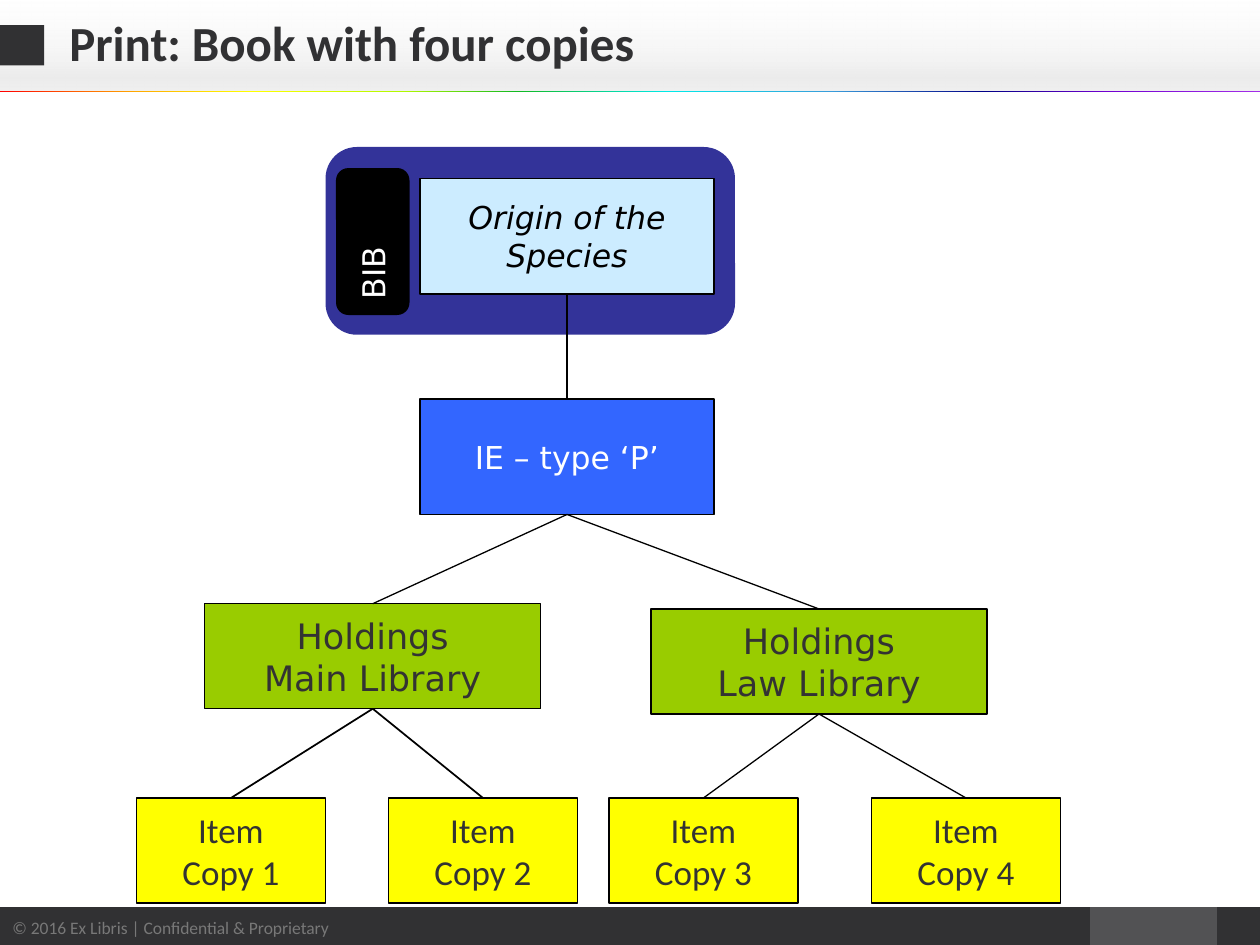
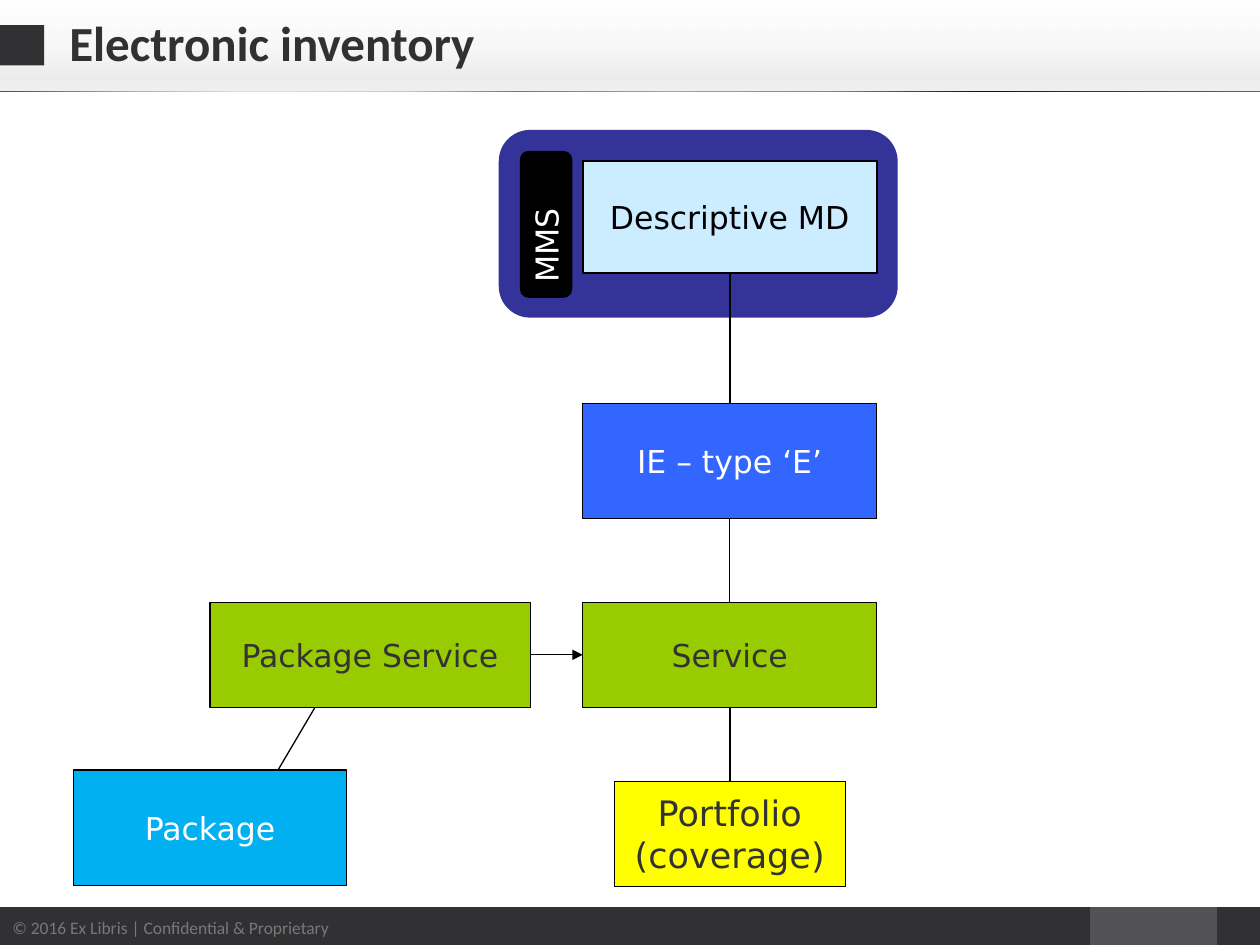
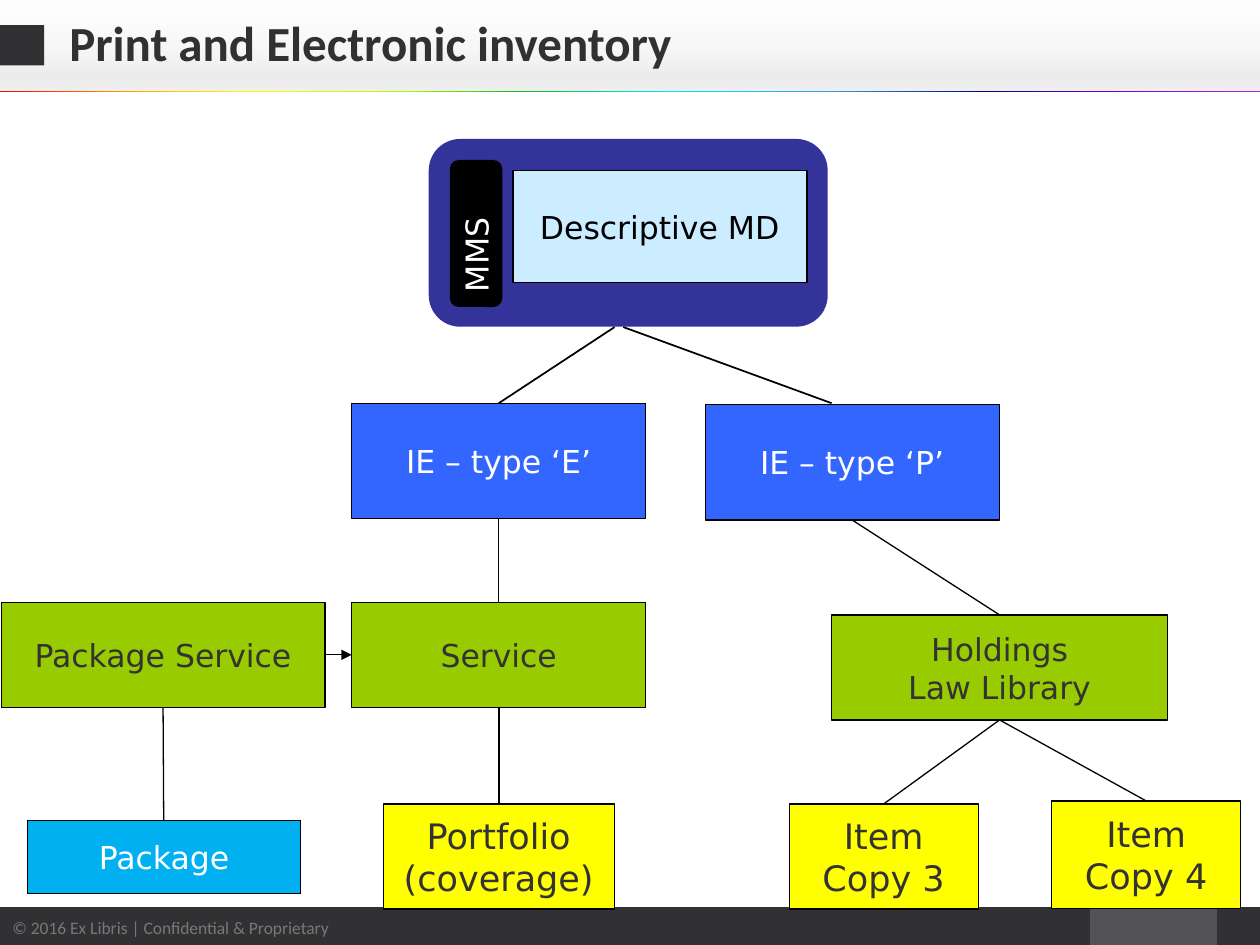
from dataclasses import dataclass, replace
from typing import Any, NamedTuple, Optional, Union

from pptx import Presentation
from pptx.dml.color import RGBColor
from pptx.enum.shapes import MSO_CONNECTOR, MSO_SHAPE
from pptx.enum.text import MSO_ANCHOR, MSO_AUTO_SIZE, PP_ALIGN
from pptx.oxml import parse_xml
from pptx.oxml.ns import nsdecls, qn
from pptx.util import Pt


@dataclass(frozen=True)
class Theme:
    heading_font: str = "Calibri"
    diagram_font: str = "DejaVu Sans"
    title_size: int = 28
    large_size: int = 20
    label_size: int = 18
    footer_size: int = 10
    charcoal: str = "313133"
    slate: str = "525254"
    footer_ink: str = "787878"
    ink: str = "333333"
    black: str = "000000"
    white: str = "FFFFFF"
    navy: str = "333399"
    ice: str = "CCECFF"
    blue: str = "3366FF"
    green: str = "99CC00"
    yellow: str = "FFFF00"
    cyan: str = "00B0F0"
    thin: float = 0.75
    thick: float = 1


class Stop(NamedTuple):
    position: int
    color: str
    opacity: int = 100


class Gradient(NamedTuple):
    angle: int
    stops: tuple[Stop, ...]


THEME = Theme()
HEADER_SHADE = Gradient(90, (
    Stop(0, "FAFAFA", 12), Stop(66, "D7D7D7", 30),
    Stop(83, "D7D7D7", 47), Stop(100, "E4E4E4", 54),
))
RAINBOW = Gradient(180, (
    Stop(0, "A22DE8"), Stop(12, "7200D1"), Stop(22, "000086"), Stop(34, "399CDB"),
    Stop(47, "00E9E8"), Stop(59, "11B920"), Stop(68, "B1F900"), Stop(80, "FFFF00"),
    Stop(89, "FFAB00"), Stop(100, "FF0000"),
))


@dataclass(frozen=True)
class Style:
    fill: Union[str, Gradient]
    ink: str = THEME.ink
    size: int = THEME.label_size
    font: str = THEME.diagram_font
    outline: Optional[float] = THEME.thin
    italic: bool = False
    wrap: bool = False
    align: PP_ALIGN = PP_ALIGN.CENTER
    preset: MSO_SHAPE = MSO_SHAPE.FLOWCHART_PROCESS
    upward: bool = False


RECORD = Style(THEME.navy, outline=None, preset=MSO_SHAPE.ROUNDED_RECTANGLE)
TAG = replace(RECORD, fill=THEME.black, ink=THEME.white, wrap=True, upward=True)
DESCRIPTION = Style(THEME.ice, THEME.black, outline=THEME.thick, wrap=True)
WORK_TITLE = replace(DESCRIPTION, italic=True)
ENTITY = Style(THEME.blue, THEME.white, wrap=True)
SERVICE = Style(THEME.green)
HOLDINGS = replace(SERVICE, size=THEME.large_size)
ITEM = Style(THEME.yellow, size=THEME.large_size)
PRINT_ITEM = replace(ITEM, font=THEME.heading_font)
PACKAGE = replace(ENTITY, fill=THEME.cyan)
BAND = Style(THEME.charcoal, THEME.footer_ink, THEME.footer_size, THEME.heading_font,
             outline=None, wrap=True, align=PP_ALIGN.LEFT, preset=MSO_SHAPE.RECTANGLE)


class Box(NamedTuple):
    key: str
    style: Style
    left: float
    top: float
    width: float
    height: float
    text: str = ""


class Side(NamedTuple):
    key: str
    site: int


class Spot(NamedTuple):
    left: float
    top: float


class Link(NamedTuple):
    start: Union[Side, Spot]
    finish: Union[Side, Spot]
    width: float = THEME.thin
    arrow: bool = False
    behind: str = ""


class Diagram(NamedTuple):
    title: str
    boxes: list[Box]
    links: list[Link]


TOP, LEFT, BOTTOM, RIGHT = range(4)

FRAME = [
    Box("page number", replace(BAND, fill=THEME.slate), 622.8, 518.4, 72.7, 23),
    Box("footer end", BAND, 695.5, 518.4, 25.2, 23),
    Box("header", replace(BAND, fill=HEADER_SHADE), -0.7, 0.7, 720.7, 51.8),
    Box("footer", BAND, 0, 518.4, 622.8, 23,
        "© 2016 Ex Libris | Confidential & Proprietary"),
    Box("title marker", BAND, 0, 14.4, 25.2, 23),
    Box("rainbow", replace(BAND, fill=RAINBOW), 0, 51.8, 720, 1),
]


def apply(target: Any, values: dict[str, Any]) -> None:
    for attribute, value in values.items():
        setattr(target, attribute, value)


def color(value: str) -> RGBColor:
    return RGBColor.from_string(value)


def paint_gradient(shape: Any, gradient: Gradient) -> None:
    stops = "".join(
        f'<a:gs pos="{stop.position * 1000}"><a:srgbClr val="{stop.color}">'
        f'<a:alpha val="{stop.opacity * 1000}"/></a:srgbClr></a:gs>'
        for stop in gradient.stops
    )
    shape.fill.background()
    properties = shape.element.spPr
    properties.replace(properties.find(qn("a:noFill")), parse_xml(
        f'<a:gradFill {nsdecls("a")} rotWithShape="1"><a:gsLst>{stops}</a:gsLst>'
        f'<a:lin ang="{gradient.angle * 60000}" scaled="0"/></a:gradFill>'))


def write(shape: Any, text: str, style: Style) -> None:
    frame = shape.text_frame
    frame.text = text
    apply(frame, {"word_wrap": style.wrap, "vertical_anchor": MSO_ANCHOR.MIDDLE})
    for paragraph in frame.paragraphs:
        paragraph.alignment = style.align
        for run in paragraph.runs:
            apply(run.font, {"name": style.font, "size": Pt(style.size),
                             "italic": style.italic})
            run.font.color.rgb = color(style.ink)


def draw_box(slide: Any, box: Box) -> Any:
    style = box.style
    shape = slide.shapes.add_shape(style.preset, Pt(box.left), Pt(box.top),
                                   Pt(box.width), Pt(box.height))
    shape.shadow.inherit = False
    if isinstance(style.fill, Gradient):
        paint_gradient(shape, style.fill)
    else:
        shape.fill.solid()
        shape.fill.fore_color.rgb = color(style.fill)
    if style.outline is None:
        shape.line.fill.background()
    else:
        shape.line.color.rgb = color(THEME.black)
        shape.line.width = Pt(style.outline)
    if style.preset == MSO_SHAPE.ROUNDED_RECTANGLE:
        shape.adjustments[0] = 0.167
    if box.text:
        write(shape, box.text, style)
    if style.upward:
        shape.rotation = 180
        shape.element.find(".//" + qn("a:bodyPr")).set("vert", "eaVert")
    return shape


def draw_link(slide: Any, link: Link, drawn: dict[str, Any]) -> None:
    spots = [end if isinstance(end, Spot) else Spot(0, 0)
             for end in (link.start, link.finish)]
    connector = slide.shapes.add_connector(
        MSO_CONNECTOR.STRAIGHT, *(Pt(length) for spot in spots for length in spot))
    for end, join in ((link.start, connector.begin_connect),
                      (link.finish, connector.end_connect)):
        if isinstance(end, Side):
            join(drawn[end.key], end.site)
    connector.line.color.rgb = color(THEME.black)
    connector.line.width = Pt(link.width)
    properties = connector.element.spPr
    if link.arrow:
        properties.find(qn("a:ln")).append(
            parse_xml(f'<a:tailEnd {nsdecls("a")} type="triangle"/>'))
    properties.append(parse_xml(f'<a:effectLst {nsdecls("a")}/>'))
    if link.behind:
        drawn[link.behind].element.addprevious(connector.element)


def draw_title(slide: Any, text: str) -> None:
    title = slide.shapes.title
    apply(title, {"left": Pt(32.4), "top": Pt(1.4), "width": Pt(652.3), "height": Pt(49.7)})
    frame = title.text_frame
    frame.text = text
    apply(frame, {"word_wrap": True, "auto_size": MSO_AUTO_SIZE.NONE,
                  "vertical_anchor": MSO_ANCHOR.MIDDLE})
    heading = frame.paragraphs[0]
    apply(heading, {"alignment": PP_ALIGN.LEFT, "line_spacing": 0.9})
    font = heading.runs[0].font
    apply(font, {"name": THEME.heading_font, "size": Pt(THEME.title_size), "bold": True})
    font.color.rgb = color(THEME.charcoal)


def record(left: float, top: float, tag: str, inset: float, tag_width: float,
           text: str, style: Style, height: float) -> list[Box]:
    text_offset = inset + tag_width + 6
    return [
        Box("record", RECORD, left, top, text_offset + 180, 107.3),
        Box("tag", TAG, left + inset, top + 12, tag_width, 84, tag),
        Box("description", style, left + text_offset, top + 18, 168, height, text),
    ]


def mms_record(left: float, top: float) -> list[Box]:
    return record(left, top, "MMS", 12, 30, "Descriptive MD", DESCRIPTION, 64)


def entity(kind: str, left: float, top: float) -> Box:
    return Box(f"entity {kind}", ENTITY, left, top, 168, 66, f"IE – type ‘{kind}’")


def holdings(library: str, left: float, top: float, style: Style = HOLDINGS) -> Box:
    return Box(library, style, left, top, 192, 60, f"Holdings\n{library} Library")


def item(copy: int, left: float, top: float, style: Style = ITEM, height: float = 60) -> Box:
    return Box(f"copy {copy}", style, left, top, 108, height, f"Item\nCopy {copy}")


def service_chain(left: float, portfolio_top: float, supplier_left: float,
                  supplier_width: float) -> list[Box]:
    top = 344.2
    return [
        entity("E", left, 230.4),
        Box("service", SERVICE, left, top, 168, 60, "Service"),
        Box("portfolio", ITEM, left + 18, portfolio_top, 132, 60, "Portfolio\n(coverage)"),
        Box("package service", SERVICE, supplier_left, top, supplier_width, 60,
            "Package Service"),
    ]


def down(upper: str, lower: str, width: float = THEME.thin) -> Link:
    return Link(Side(upper, BOTTOM), Side(lower, TOP), width)


SERVICE_LINKS = [
    down("service", "portfolio", THEME.thick),
    down("entity E", "service"),
    Link(Side("package service", RIGHT), Side("service", LEFT), arrow=True),
]
LAW_LINKS = [down("Law", "copy 3"), down("Law", "copy 4")]

DIAGRAMS = [
    Diagram(
        "Print: Book with four copies",
        [
            *record(186, 84, "BIB", 6, 42, "Origin of the Species", WORK_TITLE, 66),
            entity("P", 240, 228),
            holdings("Main", 117, 345),
            holdings("Law", 372, 348),
            *(item(number, left, 456, PRINT_ITEM)
              for number, left in enumerate((78, 222, 348, 498), 1)),
        ],
        [
            down("description", "entity P", THEME.thick),
            down("entity P", "Main"),
            down("entity P", "Law"),
            down("Main", "copy 1", THEME.thick),
            down("Main", "copy 2", THEME.thick),
            *LAW_LINKS,
        ],
    ),
    Diagram(
        "Electronic inventory",
        [
            *mms_record(285, 74.2),
            *service_chain(333, 446.4, 120, 183),
            Box("package", PACKAGE, 42, 440, 156, 66, "Package"),
        ],
        [
            down("description", "entity E", THEME.thick),
            *SERVICE_LINKS,
            Link(Side("package", BOTTOM), Spot(180, 404.2), behind="package"),
        ],
    ),
    Diagram(
        "Print and Electronic inventory",
        [
            *mms_record(245, 79.4),
            *service_chain(201, 459.4, 0.7, 185),
            Box("package", PACKAGE, 15.8, 468.7, 156, 42, "Package"),
            entity("P", 403, 231.2),
            item(3, 451, 459.4),
            holdings("Law", 475.2, 351.4, SERVICE),
            item(4, 601, 457.7, height=61.5),
        ],
        [
            *SERVICE_LINKS,
            Link(Side("package", BOTTOM), Side("package service", BOTTOM), behind="package"),
            Link(Side("entity E", TOP), Spot(351.2, 186.9), THEME.thick),
            Link(Spot(475.2, 230.4), Spot(356.2, 186.9), THEME.thick),
            down("entity P", "Law"),
            *LAW_LINKS,
        ],
    ),
]


def main() -> None:
    deck = Presentation()
    apply(deck, {"slide_width": Pt(720), "slide_height": Pt(540)})
    layout = deck.slide_layouts[5]
    for number, diagram in enumerate(DIAGRAMS):
        slide = deck.slides.add_slide(layout)
        if number == 0:
            for part in FRAME:
                layout.shapes.element.append(draw_box(slide, part).element)
        draw_title(slide, diagram.title)
        drawn = {box.key: draw_box(slide, box) for box in diagram.boxes}
        for link in diagram.links:
            draw_link(slide, link, drawn)
    deck.save("out.pptx")


if __name__ == "__main__":
    main()
